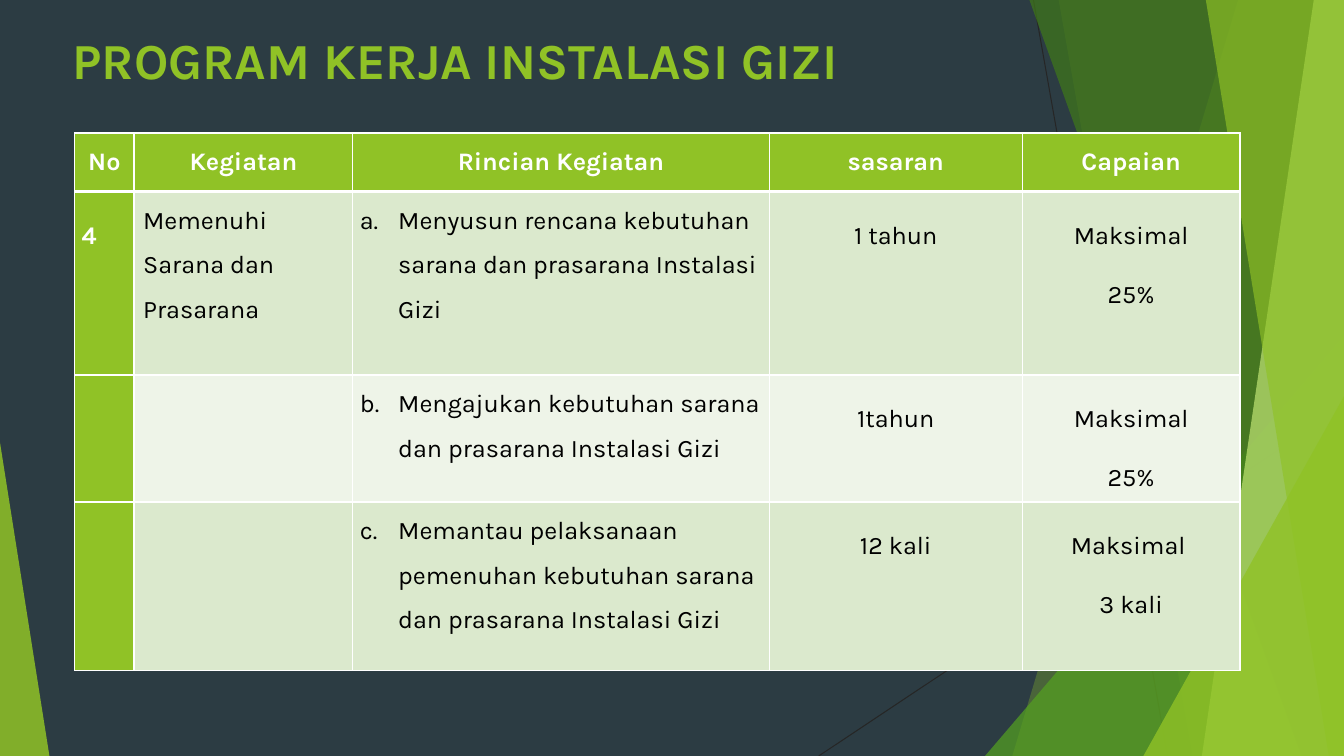
from dataclasses import dataclass, field

from lxml import etree
from pptx import Presentation
from pptx.dml.color import RGBColor
from pptx.enum.shapes import MSO_CONNECTOR, MSO_SHAPE
from pptx.enum.text import MSO_ANCHOR, PP_ALIGN
from pptx.oxml.ns import qn
from pptx.util import Inches, Pt

STRAIGHT = MSO_CONNECTOR.STRAIGHT
TRIANGLE = MSO_SHAPE.ISOSCELES_TRIANGLE
MIDDLE, TOP = MSO_ANCHOR.MIDDLE, MSO_ANCHOR.TOP
LEFT, CENTER, JUSTIFY = PP_ALIGN.LEFT, PP_ALIGN.CENTER, PP_ALIGN.JUSTIFY

WIDE, HIGH = 13.33, 7.5
FONT = "Karla"
COLORS = {
    "back": "2C3C43", "lime": "90C226", "leaf": "54A021", "moss": "3F7819",
    "pale": "C0E474", "line": "262626", "white": "FFFFFF", "black": "000000",
    "band": "DBE9CD", "light": "EEF4E8",
}


@dataclass
class Blade:
    """A band that runs from two points on the left to the right slide edge."""
    top: float
    foot: float
    color: str
    alpha: int


@dataclass
class Peak:
    left: float
    top: float
    width: float
    tip: int
    color: str
    alpha: int


@dataclass
class Style:
    color: str = "black"
    bold: bool = False
    anchor: MSO_ANCHOR = TOP
    inset: float = 0.07
    indent: tuple = ()
    para: dict = field(default_factory=dict)


LINES = [(10.25, 0, 11.58, HIGH), (WIDE, 4.03, 8.12, HIGH)]
SHAPES = [
    Blade(12.28, 10.04, "lime", 30),
    Blade(10.5, 11.83, "lime", 20),
    Peak(9.77, 3.33, 3.56, 1, "leaf", 72),
    Blade(10.21, 12.91, "moss", 70),
    Blade(13.03, 11.92, "pale", 70),
    Blade(11.96, 13.18, "lime", 65),
    Peak(11.34, 3.93, 1.99, 1, "lime", 80),
    Peak(0, 4.39, 0.49, 0, "lime", 85),
]

COLS = [0.59, 2.17, 4.13, 2.51, 2.16]
ROWS = [0.58, 1.82, 1.26, 1.67]
TEXTS = [
    ["No", "Kegiatan", "Rincian Kegiatan", "sasaran", "Capaian"],
    ["4", "Memenuhi Sarana dan Prasarana",
     "Menyusun rencana kebutuhan sarana dan prasarana Instalasi Gizi",
     "1 tahun", "Maksimal\n25%"],
    ["", "", "Mengajukan kebutuhan sarana dan prasarana Instalasi Gizi",
     "1tahun", "Maksimal\n25%"],
    ["", "", "Memantau pelaksanaan pemenuhan kebutuhan sarana dan prasarana Instalasi Gizi",
     "12 kali", "Maksimal \n3 kali"],
]
LIST_COL = 2
HEAD = Style("white", True, MIDDLE, 0.03,
             para={"alignment": CENTER, "space_before": Pt(6)})
GOAL = Style(para={"alignment": CENTER, "line_spacing": 2.0})
STYLES = [
    Style("white", True, para={"alignment": JUSTIFY, "line_spacing": 2.0}),
    Style(indent=(0.02, 0), para={"alignment": LEFT, "line_spacing": 1.5}),
    Style(indent=(0.38, -0.38), para={"alignment": LEFT, "line_spacing": 1.5}),
    GOAL, GOAL,
]


def tint(name: str) -> RGBColor:
    return RGBColor.from_string(COLORS[name])


def apply(item, values: dict) -> None:
    for name, value in values.items():
        setattr(item, name, value)


def write(para, text: str, size: int, color: str, bold: bool) -> None:
    run = para.add_run()
    run.text = text
    apply(run.font, {"name": FONT, "size": Pt(size), "bold": bold})
    run.font.color.rgb = tint(color)


def draw_line(slide, ends: tuple) -> None:
    line = slide.shapes.add_connector(STRAIGHT, *map(Inches, ends))
    line.line.color.rgb = tint("line")
    line.line.width = Pt(0.75)
    etree.SubElement(line._element.spPr, qn("a:effectLst"))


def draw_shape(slide, part: Blade | Peak) -> None:
    if isinstance(part, Blade):
        pen = slide.shapes.build_freeform(Inches(part.top), 0)
        spots = [(WIDE, 0), (WIDE, HIGH), (part.foot, HIGH)]
        pen.add_line_segments([(Inches(x), Inches(y)) for x, y in spots])
        shape = pen.convert_to_shape()
    else:
        box = (part.left, part.top, part.width, HIGH - part.top)
        shape = slide.shapes.add_shape(TRIANGLE, *map(Inches, box))
        shape.adjustments[0] = part.tip
    shape.shadow.inherit = False
    shape.line.fill.background()
    shape.fill.solid()
    shape.fill.fore_color.rgb = tint(part.color)
    color = next(shape._element.spPr.iter(qn("a:srgbClr")))
    etree.SubElement(color, qn("a:alpha"), val=str(part.alpha * 1000))


def draw_title(slide) -> None:
    box = slide.shapes.add_textbox(*map(Inches, (0.62, 0.24, 9.4, 1.44)))
    apply(box.text_frame, {"word_wrap": True, "vertical_anchor": TOP})
    write(box.text_frame.paragraphs[0], "PROGRAM KERJA INSTALASI GIZI",
          36, "lime", True)


def frame_cell(cell, row: int) -> None:
    """Give a cell white borders, with a thick rule under the header."""
    props = cell._tc.get_or_add_tcPr()
    thick = {0: "B", 1: "T"}.get(row)
    for spot, side in enumerate("LRTB"):
        width = Pt(3 if side == thick else 1)
        edge = etree.Element(qn("a:ln" + side), w=str(width))
        fill = etree.SubElement(edge, qn("a:solidFill"))
        etree.SubElement(fill, qn("a:srgbClr"), val=COLORS["white"])
        props.insert(spot, edge)


def number(para, start: int) -> None:
    etree.SubElement(para._p.get_or_add_pPr(), qn("a:buAutoNum"),
                     type="alphaLcPeriod", startAt=str(start))


def fill_cell(cell, row: int, col: int) -> None:
    style = STYLES[col] if row else HEAD
    edge = Inches(style.inset)
    apply(cell, {"vertical_anchor": style.anchor, "margin_left": edge,
                 "margin_right": edge, "margin_top": 0, "margin_bottom": 0})
    cell.fill.solid()
    band = "band" if row % 2 else "light"
    cell.fill.fore_color.rgb = tint(band if row and col else "lime")
    frame_cell(cell, row)
    if not TEXTS[row][col]:
        return
    for spot, text in enumerate(TEXTS[row][col].split("\n")):
        frame = cell.text_frame
        para = frame.add_paragraph() if spot else frame.paragraphs[0]
        apply(para, style.para)
        if style.indent:
            props = para._p.get_or_add_pPr()
            for name, value in zip(("marL", "indent"), style.indent):
                props.set(name, str(Inches(value)))
        if row and col == LIST_COL:
            number(para, row)
        write(para, text, 18, style.color, style.bold)


def draw_table(slide) -> None:
    box = (0.74, 1.32, sum(COLS), sum(ROWS))
    table = slide.shapes.add_table(len(ROWS), len(COLS), *map(Inches, box)).table
    for col, width in enumerate(COLS):
        table.columns[col].width = Inches(width)
    for row, height in enumerate(ROWS):
        table.rows[row].height = Inches(height)
        for col in range(len(COLS)):
            fill_cell(table.cell(row, col), row, col)


def main() -> None:
    deck = Presentation()
    apply(deck, {"slide_width": Inches(WIDE), "slide_height": Inches(HIGH)})
    slide = deck.slides.add_slide(deck.slide_layouts[6])
    slide.background.fill.solid()
    slide.background.fill.fore_color.rgb = tint("back")
    for ends in LINES:
        draw_line(slide, ends)
    for part in SHAPES:
        draw_shape(slide, part)
    draw_title(slide)
    draw_table(slide)
    deck.save("out.pptx")


if __name__ == "__main__":
    main()
